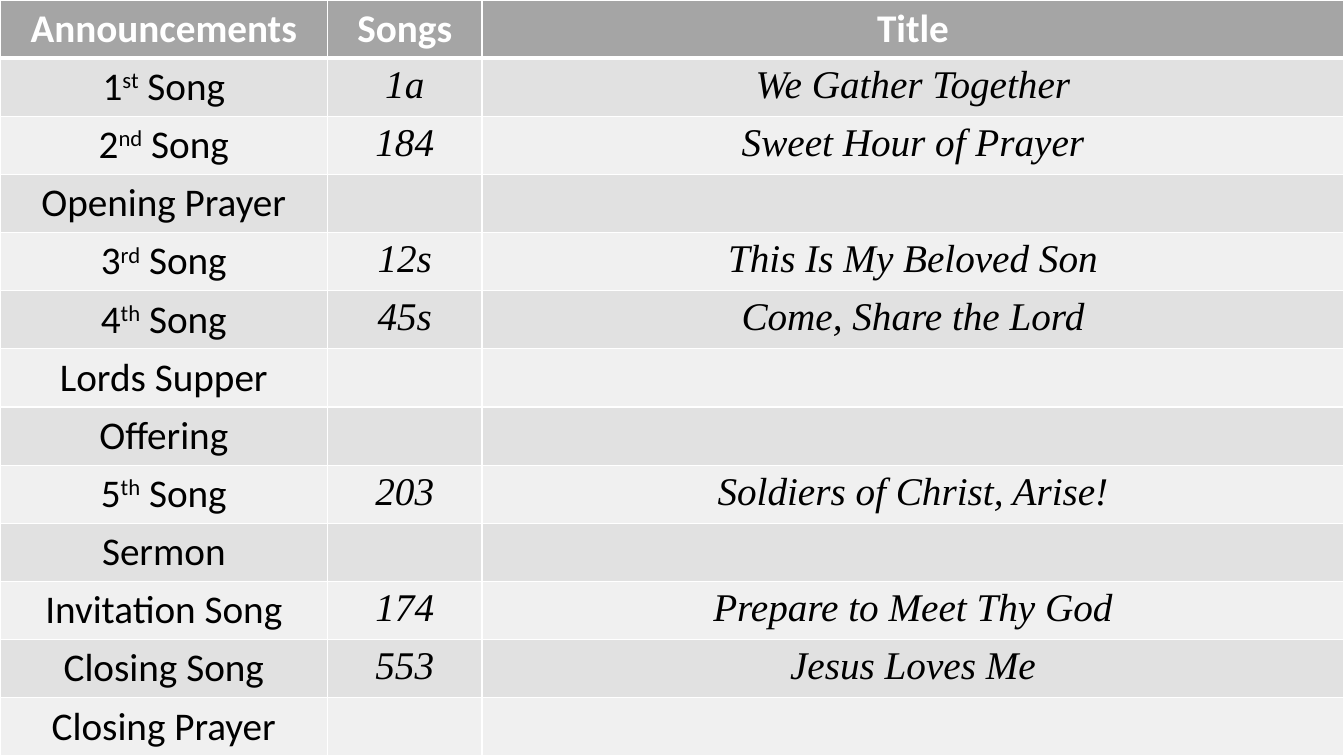
"""Build the order-of-service slide with its table of songs."""
from lxml.etree import SubElement
from pptx import Presentation
from pptx.dml.color import RGBColor
from pptx.enum.text import PP_ALIGN
from pptx.oxml.ns import qn
from pptx.util import Pt

EMU_PER_PX = 9525
WIDTH, HEIGHT = 1280, 720
COL_WIDTHS = (312, 147, 821)

WHITE = RGBColor(0xFF, 0xFF, 0xFF)
BLACK = RGBColor(0x00, 0x00, 0x00)
HEADER_GRAY = RGBColor(0xA5, 0xA5, 0xA5)
BANDS = (RGBColor(0xF0, 0xF0, 0xF0), RGBColor(0xE1, 0xE1, 0xE1))

LABEL_FONT = "Calibri"
SONG_FONT = "Times New Roman"

HEADER = ("Announcements", "Songs", "Title")
SERVICE = (
    (("1", "st", " Song"), "1a", "We Gather Together"),
    (("2", "nd", " Song"), "184", "Sweet Hour of Prayer"),
    (("Opening Prayer",), "", ""),
    (("3", "rd", " Song"), "12s", "This Is My Beloved Son"),
    (("4", "th", " Song"), "45s", "Come, Share the Lord"),
    (("Lords Supper",), "", ""),
    (("Offering",), "", ""),
    (("5", "th", " Song"), "203", "Soldiers of Christ, Arise!"),
    (("Sermon",), "", ""),
    (("Invitation Song",), "174", "Prepare to Meet Thy God"),
    (("Closing Song",), "553", "Jesus Loves Me"),
    (("Closing Prayer",), "", ""),
)


def px(n):
    """Turn pixels into EMU."""
    return n * EMU_PER_PX


def style_cell(cell, fill, top=1, bottom=1):
    """Give a cell white borders, widths in points, and a solid fill."""
    tcPr = cell._tc.get_or_add_tcPr()
    for side, width in (("L", 1), ("R", 1), ("T", top), ("B", bottom)):
        ln = SubElement(tcPr, qn(f"a:ln{side}"), w=str(Pt(width)))
        solid = SubElement(ln, qn("a:solidFill"))
        SubElement(solid, qn("a:srgbClr"), val=str(WHITE))
    cell.fill.solid()
    cell.fill.fore_color.rgb = fill


def add_text(cell, parts, font, color, bold=False, italic=False):
    """Write centred runs; the second of several is superscript."""
    p = cell.text_frame.paragraphs[0]
    p.alignment = PP_ALIGN.CENTER
    for i, text in enumerate(parts):
        r = p.add_run()
        r.text = text
        r.font.name = font
        r.font.size = Pt(28)
        r.font.bold = bold
        r.font.italic = italic
        r.font.color.rgb = color
        if i == 1:
            r._r.get_or_add_rPr().set("baseline", "30000")


def add_service_table(s):
    """Add the full-slide table of announcements and songs."""
    frame = s.shapes.add_table(len(SERVICE) + 1, len(HEADER),
                               0, 0, px(WIDTH), px(HEIGHT))
    table = frame.table
    for col, width in zip(table.columns, COL_WIDTHS):
        col.width = px(width)
    for c, title in enumerate(HEADER):
        cell = table.cell(0, c)
        style_cell(cell, HEADER_GRAY, bottom=3)
        add_text(cell, (title,), LABEL_FONT, WHITE, bold=True)
    for row, (label, number, title) in enumerate(SERVICE, 1):
        for c in range(len(HEADER)):
            style_cell(table.cell(row, c), BANDS[row % 2],
                       top=3 if row == 1 else 1)
        add_text(table.cell(row, 0), label, LABEL_FONT, BLACK)
        if number:
            for c, text in enumerate((number, title), 1):
                add_text(table.cell(row, c), (text,), SONG_FONT, BLACK,
                         italic=True)


def main():
    """Create the presentation and save it."""
    prs = Presentation()
    prs.slide_width, prs.slide_height = px(WIDTH), px(HEIGHT)
    s = prs.slides.add_slide(prs.slide_layouts[6])
    add_service_table(s)
    prs.save("out.pptx")


if __name__ == "__main__":
    main()
